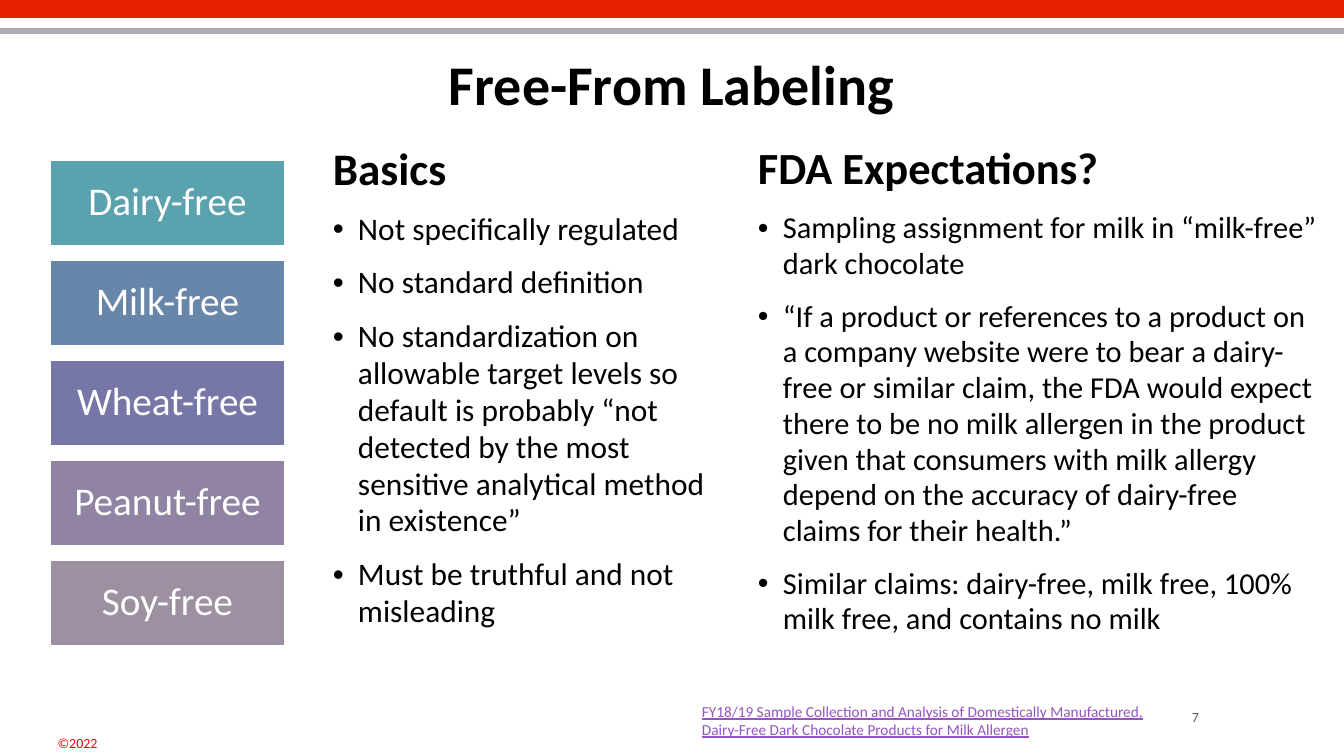
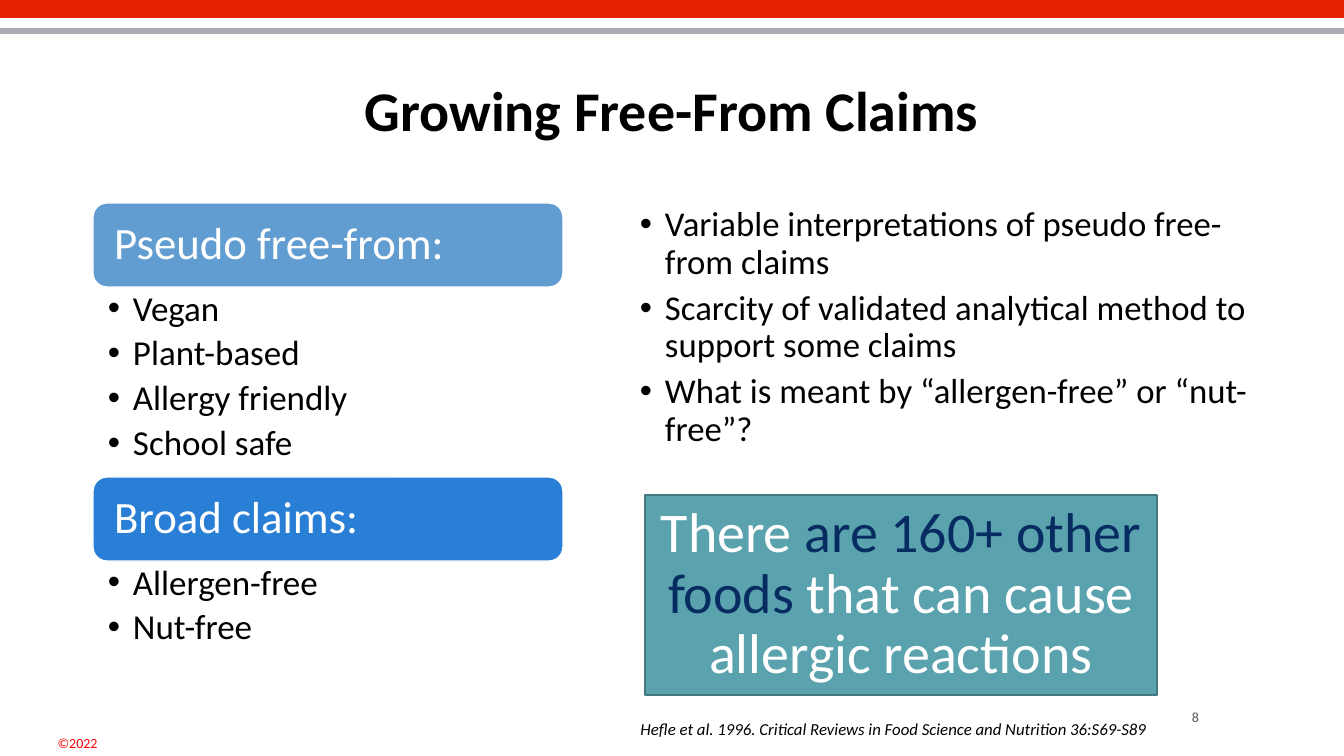
from dataclasses import dataclass

from lxml.etree import SubElement
from pptx import Presentation
from pptx.dml.color import RGBColor
from pptx.enum.shapes import MSO_CONNECTOR, MSO_SHAPE
from pptx.enum.text import MSO_ANCHOR, MSO_AUTO_SIZE, PP_ALIGN
from pptx.oxml.ns import qn
from pptx.util import Pt

PX = 914400 / 100.8
SLIDE_W, SLIDE_H = 1344, 756
TITLE_ONLY = 5


@dataclass(frozen=True)
class Theme:
    font: str = "Calibri"
    black: str = "000000"
    white: str = "FFFFFF"
    navy: str = "072C62"
    teal: str = "5AA2AE"
    teal_edge: str = "437881"
    link: str = "9454C3"
    copyright: str = "FF0000"
    number: str = "595959"
    tiles: tuple = ("5AA2AE", "6885AA", "7677A6", "9083A3", "9D90A0")
    claims: tuple = ("629DD1", "297FD5")
    # Band: y in px, colour, weight in points
    bands: tuple = ((8, "E72000", 14.4), (31, "AFABB4", 4.2))
    title_size: float = 40
    tile_size: float = 28
    claim_size: float = 32
    item_size: float = 25
    point_size: float = 24.8
    callout_size: float = 40
    citation_size: float = 12
    link_size: float = 10.9
    footer_size: float = 10


THEME = Theme()


def px(length):
    return round(length * PX)


def apply(target, formats):
    for name, value in formats.items():
        setattr(target, name, value)


def place(part, box):
    apply(part, dict(zip(("left", "top", "width", "height"), map(px, box))))


def prepare(frame, anchor=MSO_ANCHOR.TOP, insets=(10, 5, 10, 5)):
    """Insets are left, top, right, bottom in px."""
    apply(frame, {"word_wrap": True, "auto_size": MSO_AUTO_SIZE.NONE,
                  "vertical_anchor": anchor})
    sides = ("margin_left", "margin_top", "margin_right", "margin_bottom")
    apply(frame, dict(zip(sides, map(px, insets))))


def write(paragraph, text, size, colour=THEME.black, layout=None, **font):
    run = paragraph.add_run()
    run.text = text
    apply(paragraph, layout or {})
    apply(run.font, {"name": THEME.font, "size": Pt(size), **font})
    run.font.color.rgb = RGBColor.from_string(colour)


def write_bullets(frame, items, size, layout, gap, started=False):
    """Bulleted items; gap is the space before each, except at the box top."""
    for item in items:
        paragraph = frame.add_paragraph() if started else frame.paragraphs[0]
        properties = paragraph._p.get_or_add_pPr()
        properties.set("marL", str(px(25)))
        properties.set("indent", str(px(-25)))
        SubElement(properties, qn("a:buFont"), typeface="Arial")
        SubElement(properties, qn("a:buChar"), char="•")
        spacing = {"space_before": Pt(gap)} if started else {}
        write(paragraph, item, size, layout={**layout, **spacing})
        started = True


def add_text(slide, box, **frame_formats):
    frame = slide.shapes.add_textbox(*map(px, box)).text_frame
    prepare(frame, **frame_formats)
    return frame


def add_panel(slide, kind, box, fill, edge, **frame_formats):
    panel = slide.shapes.add_shape(kind, *map(px, box))
    panel.shadow.inherit = False
    panel.fill.solid()
    panel.fill.fore_color.rgb = RGBColor.from_string(fill)
    panel.line.color.rgb = RGBColor.from_string(edge)
    panel.line.width = Pt(1)
    prepare(panel.text_frame, anchor=MSO_ANCHOR.MIDDLE, **frame_formats)
    return panel.text_frame


# Shared frame: bands, title, footer
def add_bands(slide):
    for y, colour, weight in THEME.bands:
        band = slide.shapes.add_connector(
            MSO_CONNECTOR.STRAIGHT, 0, px(y), px(SLIDE_W), px(y))
        band.line.color.rgb = RGBColor.from_string(colour)
        band.line.width = Pt(weight)
        SubElement(band._element.spPr, qn("a:effectLst"))


def add_footer(slide, number):
    middle = MSO_ANCHOR.MIDDLE
    notice = add_text(slide, (27, 729, 101, 27), anchor=middle)
    write(notice.paragraphs[0], "©2022", THEME.footer_size, THEME.copyright,
          {"alignment": PP_ALIGN.CENTER})
    page = add_text(slide, (1167, 696, 42, 41), anchor=middle)
    write(page.paragraphs[0], str(number), THEME.footer_size, THEME.number,
          {"alignment": PP_ALIGN.RIGHT})


def start_slide(deck, title, title_height, number):
    slide = deck.slides.add_slide(deck.slide_layouts[TITLE_ONLY])
    add_bands(slide)
    heading = slide.shapes.title
    place(heading, (92, 40, 1159, title_height))
    prepare(heading.text_frame, anchor=MSO_ANCHOR.MIDDLE)
    write(heading.text_frame.paragraphs[0], title, THEME.title_size,
          layout={"alignment": PP_ALIGN.CENTER, "line_spacing": 0.9}, bold=True)
    add_footer(slide, number)
    return slide


# Regions
def add_tiles(slide, box, labels, gap):
    left, top, width, height = box
    step = (height + gap) / len(labels)
    for index, (label, colour) in enumerate(zip(labels, THEME.tiles)):
        tile = add_panel(slide, MSO_SHAPE.RECTANGLE,
                         (left, top + index * step, width, step - gap),
                         colour, THEME.white)
        write(tile.paragraphs[0], label, THEME.tile_size, THEME.white,
              {"alignment": PP_ALIGN.CENTER, "line_spacing": 0.9})


def add_column(slide, box, heading, heading_size, points, point_size):
    column = add_text(slide, box)
    write(column.paragraphs[0], heading, heading_size, bold=True)
    write_bullets(column, points, point_size, {"line_spacing": 0.98}, 12,
                  started=True)


def add_claim_groups(slide, box, groups):
    """Each group is a rounded header with its items below."""
    left, top, width, header_height = box
    for (header, items, items_height), colour in zip(groups, THEME.claims):
        claim = add_panel(slide, MSO_SHAPE.ROUNDED_RECTANGLE,
                          (left, top, width, header_height),
                          colour, THEME.white, insets=(17, 13, 17, 13))
        write(claim.paragraphs[0], header, THEME.claim_size, THEME.white,
              {"alignment": PP_ALIGN.LEFT, "line_spacing": 0.9})
        top += header_height
        listing = add_text(slide, (left, top, width, items_height),
                           insets=(15, 4, 25, 4))
        write_bullets(listing, items, THEME.item_size,
                      {"line_spacing": 0.9}, 5)
        top += items_height


def add_callout(slide, box, phrases):
    callout = add_panel(slide, MSO_SHAPE.RECTANGLE, box,
                        THEME.teal, THEME.teal_edge)
    for phrase, colour in phrases:
        write(callout.paragraphs[0], phrase, THEME.callout_size, colour,
              {"alignment": PP_ALIGN.CENTER, "line_spacing": 0.9})


# Slides
def build_labeling(deck):
    slide = start_slide(deck, "Free-From Labeling", 94, 7)
    add_tiles(slide, (50, 160, 235, 486),
              ("Dairy-free", "Milk-free", "Wheat-free", "Peanut-free",
               "Soy-free"), 14)
    add_column(slide, (323, 135, 396, 571), "Basics", 32.2, (
        "Not specifically regulated",
        "No standard definition",
        "No standardization on allowable target levels so default is probably "
        "“not detected by the most sensitive analytical method in existence”",
        "Must be truthful and not misleading",
    ), 22.4)
    add_column(slide, (748, 135, 584, 560), "FDA Expectations?", 31.8, (
        "Sampling assignment for milk in “milk-free” dark chocolate",
        "“If a product or references to a product on a company website were "
        "to bear a dairy-free or similar claim, the FDA would expect there to "
        "be no milk allergen in the product given that consumers with milk "
        "allergy depend on the accuracy of dairy-free claims for their health.”",
        "Similar claims: dairy-free, milk free, 100% milk free, and contains "
        "no milk",
    ), 21.7)
    reference = add_text(slide, (692, 697, 493, 47))
    write(reference.paragraphs[0],
          "FY18/19 Sample Collection and Analysis of Domestically "
          "Manufactured, Dairy-Free Dark Chocolate Products for Milk Allergen",
          THEME.link_size, THEME.link, underline=True)


def build_claims(deck):
    slide = start_slide(deck, "Growing Free-From Claims", 146, 8)
    add_claim_groups(slide, (93, 203, 470, 84), (
        ("Pseudo free-from:",
         ("Vegan", "Plant-based", "Allergy friendly", "School safe"), 190),
        ("Broad claims:", ("Allergen-free", "Nut-free"), 95),
    ))
    concerns = add_text(slide, (630, 202, 647, 261))
    write_bullets(concerns, (
        "Variable interpretations of pseudo free-from claims",
        "Scarcity of validated analytical method to support some claims",
        "What is meant by “allergen-free” or “nut-free”?",
    ), THEME.point_size, {"line_spacing": 0.9}, 6)
    add_callout(slide, (645, 495, 512, 200), (
        ("There ", THEME.white),
        ("are 160+ other foods ", THEME.navy),
        ("that can cause allergic reactions", THEME.white),
    ))
    citation = add_text(slide, (446, 714, 711, 30))
    write(citation.paragraphs[0],
          "Hefle et al. 1996. Critical Reviews in Food Science and Nutrition "
          "36:S69-S89", THEME.citation_size,
          layout={"alignment": PP_ALIGN.RIGHT}, italic=True)


def main():
    deck = Presentation()
    apply(deck, {"slide_width": px(SLIDE_W), "slide_height": px(SLIDE_H)})
    build_labeling(deck)
    build_claims(deck)
    deck.save("out.pptx")


if __name__ == "__main__":
    main()
